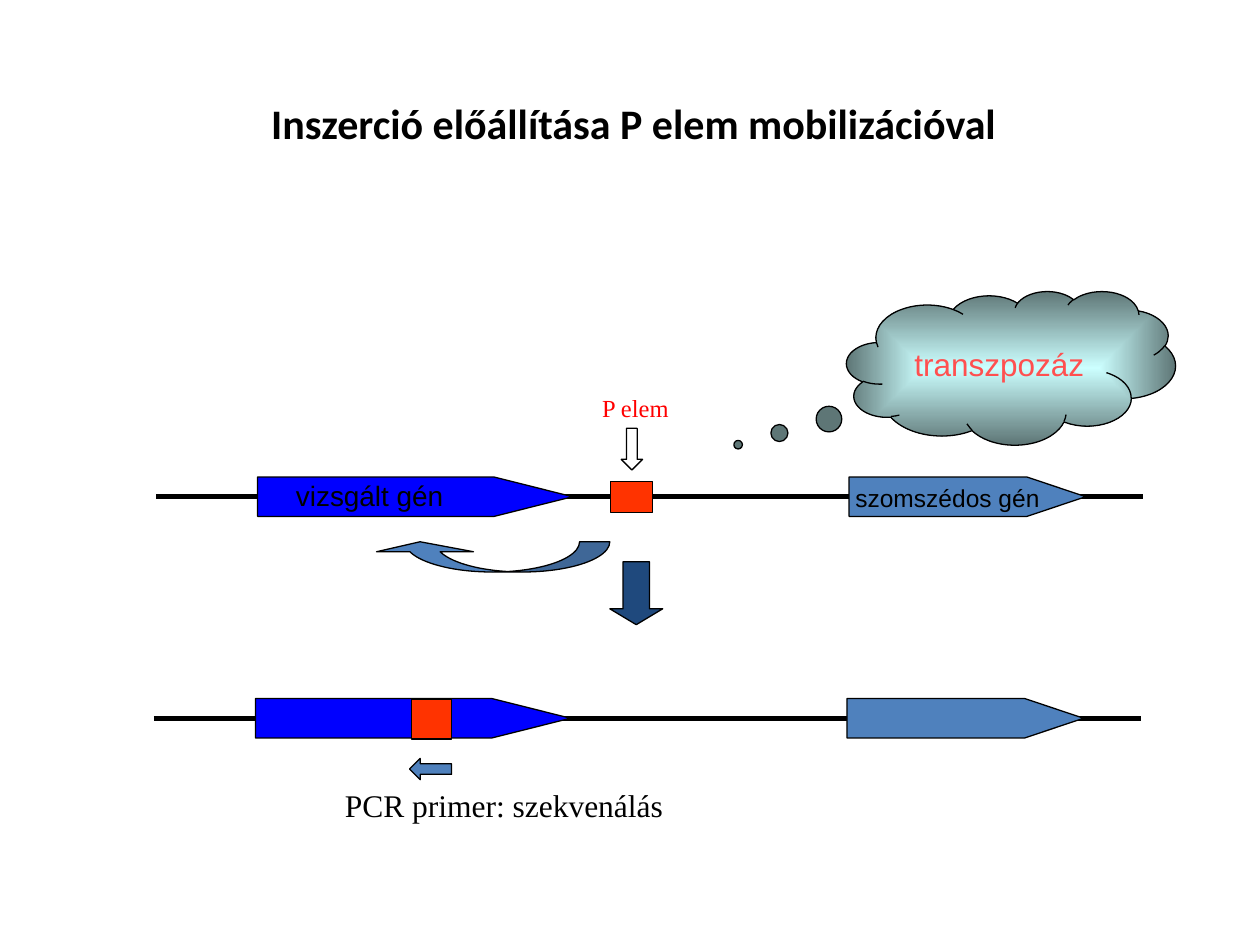
from lxml.etree import SubElement
from pptx import Presentation
from pptx.dml.color import RGBColor
from pptx.enum.shapes import MSO_CONNECTOR, MSO_SHAPE as SHAPE
from pptx.enum.text import MSO_ANCHOR, PP_ALIGN
from pptx.oxml.ns import qn
from pptx.util import Pt

BLACK, WHITE, RED = "000000", "FFFFFF", "FF0000"
GENE, NEIGHBOUR, INSERT, DARK = "0000FF", "4F81BD", "FF3300", "1F497D"
CLOUD_CENTER, CLOUD_EDGE, CLOUD_TEXT = "CCFFFF", "5E7676", "FF5050"


def rgb(value):
    return RGBColor.from_string(value)


def set_text(s, text, size, font, color=BLACK, bold=False, centered=False):
    tf = s.text_frame
    tf.text = text
    tf.word_wrap = True
    p = tf.paragraphs[0]
    p.alignment = PP_ALIGN.CENTER if centered else PP_ALIGN.LEFT
    tf.vertical_anchor = MSO_ANCHOR.MIDDLE if centered else MSO_ANCHOR.TOP
    r = p.runs[0]
    r.font.size = Pt(size)
    r.font.name = font
    r.font.bold = bold
    r.font.color.rgb = rgb(color)


def add_title(slide, text):
    s = slide.shapes.title
    s.left, s.top, s.width, s.height = Pt(18), Pt(36), Pt(688.3), Pt(67.7)
    set_text(s, text, 24, "Calibri", bold=True, centered=True)


def add_label(slide, text, x, y, w, h, size, font, color=BLACK):
    s = slide.shapes.add_textbox(Pt(x), Pt(y), Pt(w), Pt(h))
    set_text(s, text, size, font, color)


def add_shape(slide, kind, x, y, w, h, fill, adjustments=()):
    s = slide.shapes.add_shape(kind, Pt(x), Pt(y), Pt(w), Pt(h))
    s.shadow.inherit = False
    s.fill.solid()
    s.fill.fore_color.rgb = rgb(fill)
    s.line.color.rgb = rgb(BLACK)
    s.line.width = Pt(0.75)
    for i, value in enumerate(adjustments):
        s.adjustments[i] = value
    return s


def add_chromosome(slide, x, y):
    s = slide.shapes.add_connector(
        MSO_CONNECTOR.STRAIGHT, Pt(x), Pt(y), Pt(x + 563.8), Pt(y))
    s.line.color.rgb = rgb(BLACK)
    s.line.width = Pt(3)
    SubElement(s._element.spPr, qn("a:effectLst"))
    genes = ((58, 180, 1.99, GENE), (396, 135.2, 1.49, NEIGHBOUR))
    for dx, width, tip, color in genes:
        add_shape(slide, SHAPE.PENTAGON, x + dx, y - 11.2, width, 22.5,
                  color, [tip])


def add_cloud(slide, text, x, y, w, h):
    s = add_shape(slide, SHAPE.CLOUD_CALLOUT, x, y, w, h, CLOUD_CENTER,
                  [-0.83, 0.5])
    s.fill.gradient()
    for stop, color in zip(s.fill.gradient_stops, (CLOUD_CENTER, CLOUD_EDGE)):
        stop.color.rgb = rgb(color)
    grad = s._element.spPr.find(qn("a:gradFill"))
    grad.remove(grad.find(qn("a:lin")))
    path = SubElement(grad, qn("a:path"), path="rect")
    SubElement(path, qn("a:fillToRect"),
               {side: "50000" for side in "ltrb"})
    set_text(s, text, 18, "Arial", CLOUD_TEXT, centered=True)


def add_jump_arrow(slide, x, y, w, h):
    s = add_shape(slide, SHAPE.CURVED_UP_ARROW, x, y, w, h, NEIGHBOUR,
                  [1.6, 3.2, 0.33])
    s._element.spPr.xfrm.set("flipH", "1")


def main():
    prs = Presentation()
    prs.slide_width, prs.slide_height = Pt(720), Pt(540)
    slide = prs.slides.add_slide(prs.slide_layouts[5])
    add_title(slide, "Inszerció előállítása P elem mobilizációval")

    add_chromosome(slide, 89.2, 283.8)
    add_label(slide, "vizsgált gén", 162, 270, 149.8, 26.6, 16, "Arial")
    add_label(slide, "szomszédos gén", 481.7, 272.2, 156.2, 23.8, 14, "Arial")
    add_label(slide, "P elem", 337, 221, 59.8, 23.8, 14,
              "Times New Roman", RED)
    add_shape(slide, SHAPE.DOWN_ARROW, 355, 244.8, 12.2, 23.8, WHITE)
    add_shape(slide, SHAPE.RECTANGLE, 349, 275, 24, 18, INSERT)
    add_cloud(slide, "transzpozáz", 483.8, 166.3, 187.9, 87.8)

    add_jump_arrow(slide, 212.4, 309.6, 136.1, 17.3)
    add_shape(slide, SHAPE.DOWN_ARROW, 348.5, 321, 30.2, 36, DARK, [0.5, 0.3])

    add_chromosome(slide, 88, 410.4)
    add_shape(slide, SHAPE.RECTANGLE, 235.2, 399.4, 23, 23, INSERT)
    add_shape(slide, SHAPE.LEFT_ARROW, 234, 433.4, 24, 12.2, NEIGHBOUR)
    add_label(slide, "PCR primer: szekvenálás", 190, 445.7, 232.6, 28.8, 18,
              "Times New Roman")
    prs.save("out.pptx")


if __name__ == "__main__":
    main()
